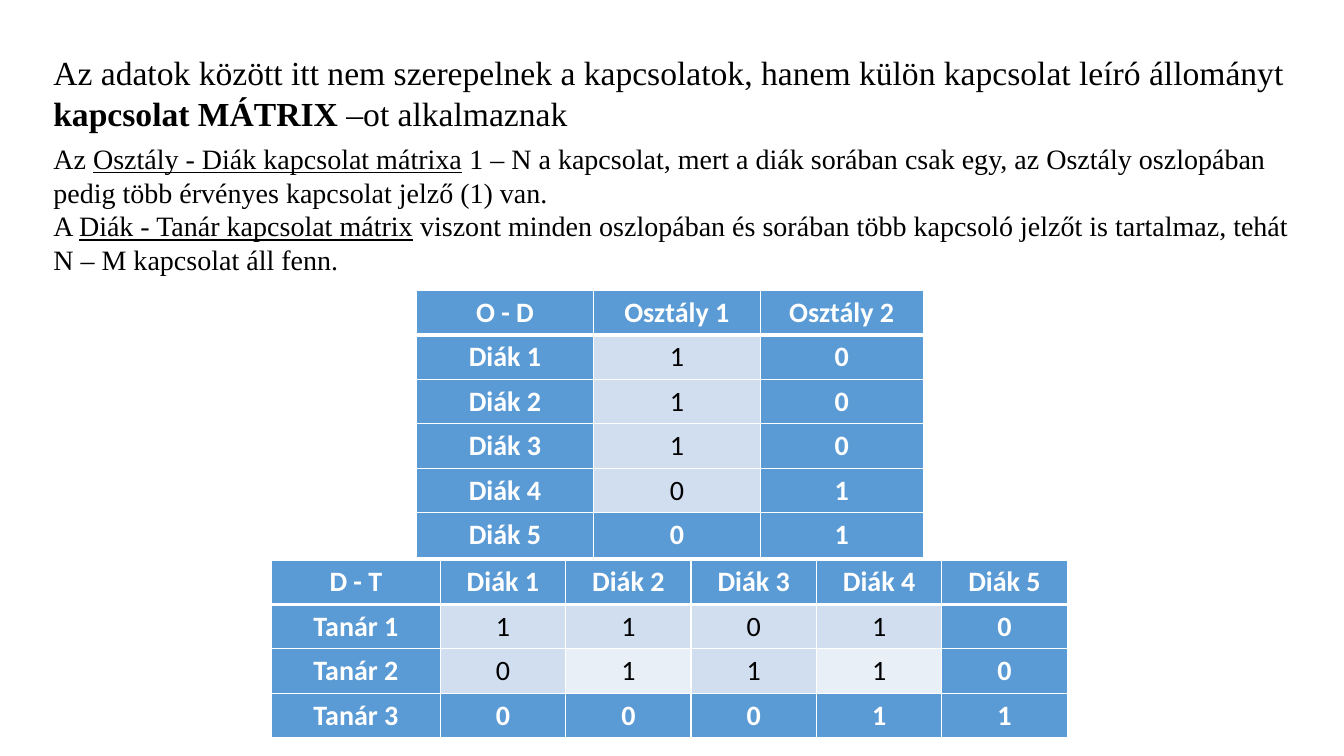
from lxml import etree
from pptx import Presentation
from pptx.dml.color import RGBColor
from pptx.enum import text
from pptx.oxml import ns
from pptx.util import Pt

WHITE = RGBColor(0xFF, 0xFF, 0xFF)
BLACK = RGBColor(0x00, 0x00, 0x00)
BLUE = RGBColor(0x5B, 0x9B, 0xD5)
DARK_BAND = RGBColor(0xD1, 0xDE, 0xEF)
LIGHT_BAND = RGBColor(0xE9, 0xEF, 0xF7)

ROW_HEIGHT = 31.75
THIN, THICK = 0.96, 3

INTRO = [
    ("Az adatok között itt nem szerepelnek a kapcsolatok, hanem külön kapcsolat leíró állományt ",
     "kapcsolat MÁTRIX", " –ot alkalmaznak"),
    ("Az ", "Osztály - Diák kapcsolat mátrixa",
     " 1 – N a kapcsolat, mert a diák sorában csak egy, az Osztály oszlopában "
     "pedig több érvényes kapcsolat jelző (1) van."),
    ("A ", "Diák - Tanár kapcsolat mátrix",
     " viszont minden oszlopában és sorában több kapcsoló jelzőt is tartalmaz, "
     "tehát N – M kapcsolat áll fenn."),
]

CLASS_STUDENT = [
    ("O - D", "Osztály 1", "Osztály 2"),
    ("Diák 1", "1", "0"),
    ("Diák 2", "1", "0"),
    ("Diák 3", "1", "0"),
    ("Diák 4", "0", "1"),
    ("Diák 5", "0", "1"),
]

STUDENT_TEACHER = [
    ("D - T", "Diák 1", "Diák 2", "Diák 3", "Diák 4", "Diák 5"),
    ("Tanár 1", "1", "1", "0", "1", "0"),
    ("Tanár 2", "0", "1", "1", "1", "0"),
    ("Tanár 3", "0", "0", "0", "1", "1"),
]


def add_intro(slide, left, top, width, height):
    """Place the explanation, with the key term of each paragraph emphasised."""
    box = slide.shapes.add_textbox(Pt(left), Pt(top), Pt(width), Pt(height))
    frame = box.text_frame
    frame.word_wrap = True
    frame.vertical_anchor = text.MSO_ANCHOR.MIDDLE
    for index, parts in enumerate(INTRO):
        is_lead = index == 0
        paragraph = frame.paragraphs[0] if is_lead else frame.add_paragraph()
        paragraph.space_after = Pt(6 if is_lead else 0)
        for part in parts:
            run = paragraph.add_run()
            run.text = part
            run.font.name = "Times New Roman"
            run.font.size = Pt(24 if is_lead else 20)
            run.font.color.rgb = BLACK
        term = paragraph.runs[1].font
        term.bold = is_lead
        term.underline = not is_lead


def set_borders(cell, top, bottom):
    """Draw white borders with the given top and bottom widths in points."""
    properties = cell._tc.get_or_add_tcPr()
    for side, width in (("L", THIN), ("R", THIN), ("T", top), ("B", bottom)):
        line = etree.SubElement(properties, ns.qn(f"a:ln{side}"), w=str(int(Pt(width))))
        fill = etree.SubElement(line, ns.qn("a:solidFill"))
        etree.SubElement(fill, ns.qn("a:srgbClr"), val=str(WHITE))


def format_cell(cell, is_edge, band, top, bottom):
    """Style one cell as a blue edge cell or a banded body cell."""
    set_borders(cell, top, bottom)
    cell.fill.solid()
    cell.fill.fore_color.rgb = BLUE if is_edge else band
    cell.margin_left = cell.margin_right = Pt(5.4)
    paragraph = cell.text_frame.paragraphs[0]
    paragraph.alignment = text.PP_ALIGN.CENTER
    font = paragraph.runs[0].font
    font.name = "Calibri"
    font.size = Pt(20)
    font.bold = is_edge
    font.color.rgb = WHITE if is_edge else BLACK


def add_matrix(slide, rows, left, top, column_widths):
    """Place a relation matrix whose outer rows and columns are blue."""
    last_row, last_column = len(rows) - 1, len(column_widths) - 1
    frame = slide.shapes.add_table(
        len(rows), len(column_widths), Pt(left), Pt(top),
        Pt(sum(column_widths)), Pt(ROW_HEIGHT * len(rows)))
    table = frame.table
    table.last_row = table.first_col = table.last_col = True
    for column, width in zip(table.columns, column_widths):
        column.width = Pt(width)
    for r, values in enumerate(rows):
        table.rows[r].height = Pt(ROW_HEIGHT)
        for c, value in enumerate(values):
            cell = table.cell(r, c)
            cell.text_frame.text = value
            is_edge = r in (0, last_row) or c in (0, last_column)
            band = DARK_BAND if r % 2 or c % 2 else LIGHT_BAND
            format_cell(cell, is_edge, band,
                        top=THICK if r == 1 else THIN,
                        bottom=THICK if r == 0 else THIN)


def build_matrix_slide(presentation):
    """Add the slide with the explanation and both matrices."""
    slide = presentation.slides.add_slide(presentation.slide_layouts[6])
    add_intro(slide, 31, 33, 907, 168.5)
    add_matrix(slide, CLASS_STUDENT, 297.5, 207.5, [126.5, 119, 116.5])
    add_matrix(slide, STUDENT_TEACHER, 194, 400, [120.5] + [89.6] * 5)


def main():
    """Build and save the presentation."""
    presentation = Presentation()
    presentation.slide_width, presentation.slide_height = Pt(960), Pt(540)
    build_matrix_slide(presentation)
    presentation.save("out.pptx")


if __name__ == "__main__":
    main()
